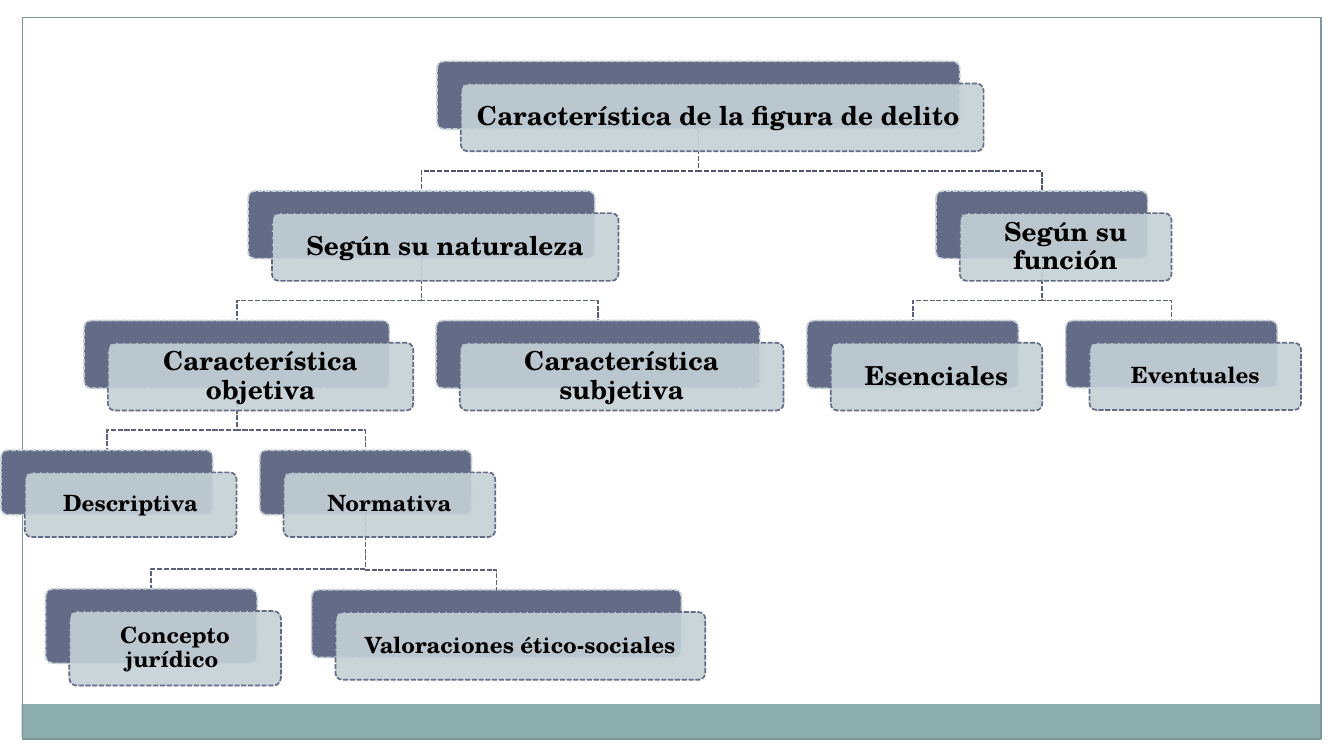
from dataclasses import dataclass

from lxml import etree
from pptx import Presentation
from pptx import util as u
from pptx.dml.color import RGBColor
from pptx.enum import dml, shapes, text
from pptx.oxml.ns import qn

Cm, Pt = u.Cm, u.Pt

BAND = RGBColor(0x8C, 0xAD, 0xAE)
FRAME = RGBColor(0x7C, 0x99, 0x9A)
SLATE = RGBColor(0x64, 0x6B, 0x86)
MIST = RGBColor(0xC5, 0xD1, 0xD7)
ROOT_LINK = RGBColor(0x50, 0x56, 0x6B)
LINK = RGBColor(0x5B, 0x61, 0x7A)
BLACK = RGBColor(0, 0, 0)

ROW_TOPS = [1.16 + 2.45 * row for row in range(4)]
CARD_SHIFT = (0.45, 0.42)
BEND_GAP = 0.38


@dataclass
class Node:
    """One concept; lengths in cm refer to its dark back plate."""
    label: str
    left: float
    top: float
    width: float = 4.0
    height: float = 1.28
    size: int = 14
    children: tuple = ()

    @property
    def center(self):
        return self.left + self.width / 2


class Diagram:
    font = "TeX Gyre Schola"

    def __init__(self, slide):
        self.slide = slide

    def outline(self, shape, color, width=0.9, dashed=True):
        shape.shadow.inherit = False
        shape.line.color.rgb = color
        shape.line.width = Pt(width)
        if dashed:
            shape.line.dash_style = dml.MSO_LINE.SQUARE_DOT

    def box(self, left, top, width, height, fill=None, rounded=False):
        kind = shapes.MSO_SHAPE.ROUNDED_RECTANGLE if rounded else shapes.MSO_SHAPE.RECTANGLE
        box = self.slide.shapes.add_shape(kind, Cm(left), Cm(top), Cm(width), Cm(height))
        box.shadow.inherit = False
        if rounded:
            box.adjustments[0] = 0.1
        if fill is None:
            box.fill.background()
        else:
            box.fill.solid()
            box.fill.fore_color.rgb = fill
        box.line.fill.background()
        return box

    def link(self, parent, child, color):
        """Draw an elbow from the parent's plate down to the child's plate."""
        bend = child.top - BEND_GAP
        start = Cm(parent.center), Cm(parent.top + parent.height)
        builder = self.slide.shapes.build_freeform(*start)
        corners = [(parent.center, bend), (child.center, bend), (child.center, child.top)]
        builder.add_line_segments([(Cm(x), Cm(y)) for x, y in corners], close=False)
        elbow = builder.convert_to_shape()
        elbow.fill.background()
        self.outline(elbow, color)

    def links(self, node, color):
        for child in node.children:
            self.link(node, child, color)
            self.links(child, LINK)

    def card(self, node):
        """Draw a dark plate with the translucent, labelled card over it."""
        plate = self.box(node.left, node.top, node.width, node.height, SLATE, rounded=True)
        self.outline(plate, MIST)
        dx, dy = CARD_SHIFT
        front = self.box(node.left + dx, node.top + dy, node.width, node.height,
                         MIST, rounded=True)
        self.outline(front, SLATE)
        tint = front._element.spPr.find(qn("a:solidFill"))[0]
        etree.SubElement(tint, qn("a:alpha"), val="90000")
        self.label(front.text_frame, node)

    def label(self, frame, node):
        frame.word_wrap = True
        frame.vertical_anchor = text.MSO_ANCHOR.MIDDLE
        inset = Cm(0.15 if node.size == 14 else 0.13)
        frame.margin_left = frame.margin_right = inset
        frame.margin_top = frame.margin_bottom = inset
        paragraph = frame.paragraphs[0]
        paragraph.text = node.label
        paragraph.alignment = text.PP_ALIGN.CENTER
        paragraph.line_spacing = 0.9
        paragraph.font.name = self.font
        paragraph.font.size = Pt(node.size)
        paragraph.font.bold = True
        paragraph.font.color.rgb = BLACK

    def cards(self, node):
        self.card(node)
        for child in node.children:
            self.cards(child)


def crime_features():
    first, second, third, fourth = ROW_TOPS
    normative = Node("Normativa", 4.91, fourth, height=1.22, size=12, children=(
        Node("Concepto jurídico ", 0.86, 11.13, height=1.41, size=12),
        Node("Valoraciones ético-sociales", 5.89, 11.15, 6.99, size=12)))
    objective = Node("Característica objetiva", 1.59, third, 5.77, children=(
        Node("Descriptiva", 0.02, fourth, height=1.22, size=12), normative))
    nature = Node("Según su naturaleza", 4.69, second, 6.55, children=(
        objective, Node("Característica subjetiva", 8.24, third, 6.12)))
    function = Node("Según su función", 17.69, second, children=(
        Node("Esenciales", 15.25, third),
        Node("Eventuales", 20.14, third, height=1.27, size=12)))
    return Node("Característica de la figura de delito ", 8.26, first, 9.88,
                children=(nature, function))


def main():
    deck = Presentation()
    deck.slide_width, deck.slide_height = Cm(25.4), Cm(14.29)
    diagram = Diagram(deck.slides.add_slide(deck.slide_layouts[6]))

    diagram.box(0.41, 13.31, 24.54, 0.64, BAND)
    frame = diagram.box(0.43, 0.33, 24.54, 13.64)
    diagram.outline(frame, FRAME, 0.75, dashed=False)

    root = crime_features()
    diagram.links(root, ROOT_LINK)
    diagram.cards(root)
    deck.save("out.pptx")


if __name__ == "__main__":
    main()
